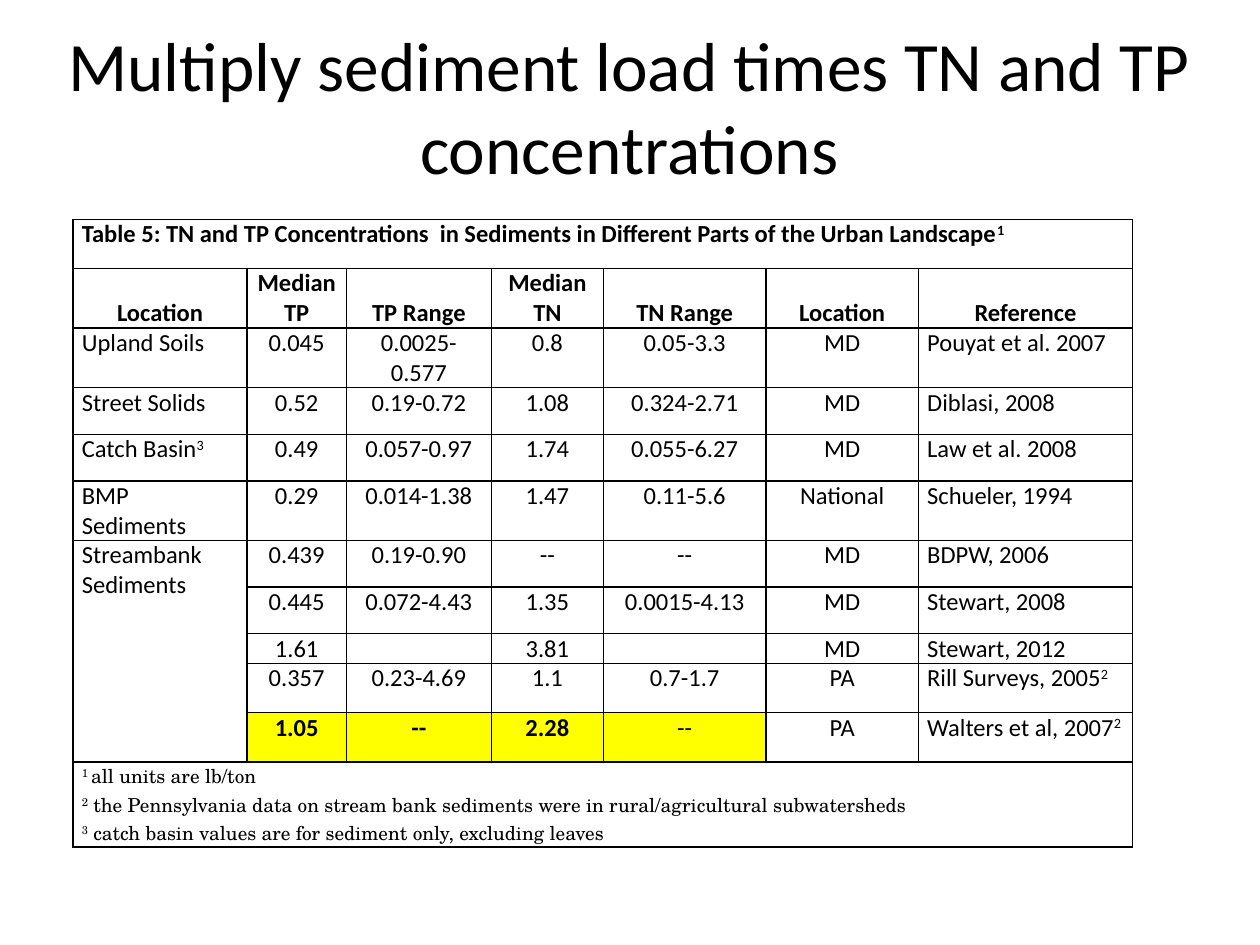
from lxml import etree
from pptx import Presentation, util as u
from pptx.dml.color import RGBColor
from pptx.enum import text
from pptx.oxml.ns import qn

# Content: text between carets is superscript, line breaks separate paragraphs
TITLE = "Multiply sediment load times TN and TP concentrations"
CAPTION = ("Table 5: TN and TP Concentrations  in Sediments in Different Parts "
           "of the Urban Landscape^1")
HEADER = ["Location", "Median TP", "TP Range", "Median TN", "TN Range", "Location", "Reference"]
DATA = [
    ["Upland Soils", "0.045", "0.0025-0.577", "0.8", "0.05-3.3", "MD", "Pouyat et al. 2007"],
    ["Street Solids", "0.52", "0.19-0.72", "1.08", "0.324-2.71", "MD", "Diblasi, 2008"],
    ["Catch Basin^3", "0.49", "0.057-0.97", "1.74", "0.055-6.27", "MD", "Law et al. 2008"],
    ["BMP Sediments", "0.29", "0.014-1.38", "1.47", "0.11-5.6", "National", "Schueler, 1994"],
    ["Streambank\nSediments", "0.439", "0.19-0.90", "--", "--", "MD", "BDPW, 2006"],
    ["", "0.445", "0.072-4.43", "1.35", "0.0015-4.13", "MD", "Stewart, 2008"],
    ["", "1.61", "", "3.81", "", "MD", "Stewart, 2012"],
    ["", "0.357", "0.23-4.69", "1.1", "0.7-1.7", "PA", "Rill Surveys, 2005^2"],
    ["", "1.05", "--", "2.28", "--", "PA", "Walters et al, 2007^2"],
]
NOTES = ("^1 ^all units are lb/ton\n"
         "^2^ the Pennsylvania data on stream bank sediments were in rural/agricultural "
         "subwatersheds\n"
         "^3^ catch basin values are for sediment only, excluding leaves")

COLORS = {"ink": "000000", "highlight": "FFFF00"}
COLUMN_WIDTHS = [1.38, 0.79, 1.15, 0.89, 1.29, 1.21, 1.7]
ROW_HEIGHTS = [0.39, 0.39, 0.39, 0.37, 0.37, 0.39, 0.37, 0.37, 0.19, 0.39, 0.39, 0.55]
LEFT, CENTER = text.PP_ALIGN.LEFT, text.PP_ALIGN.CENTER


def write(frame, content, size=14, font="Calibri", bold=False, align=LEFT):
    for index, line in enumerate(content.split("\n")):
        para = frame.paragraphs[0] if index == 0 else frame.add_paragraph()
        para.alignment = align
        for part, words in enumerate(line.split("^")):
            if not words:
                continue
            span = para.add_run()
            span.text = words
            span.font.size = u.Pt(size)
            span.font.name = font
            span.font.bold = bold
            span.font.color.rgb = RGBColor.from_string(COLORS["ink"])
            if part % 2:
                span.font._element.set("baseline", "30000")
        if not line:  # keeps empty cells from stretching their row
            etree.SubElement(para._p, qn("a:endParaRPr"), sz=str(size * 100))


def style_cell(cell, fill=None, anchor=text.MSO_ANCHOR.TOP):
    cell.margin_left = cell.margin_right = u.Inches(0.07)
    cell.margin_top = cell.margin_bottom = 0
    cell.vertical_anchor = anchor
    properties = cell._tc.get_or_add_tcPr()
    for side in ("a:lnL", "a:lnR", "a:lnT", "a:lnB"):
        line = etree.SubElement(properties, qn(side), w=str(u.Pt(1)))
        solid = etree.SubElement(line, qn("a:solidFill"))
        etree.SubElement(solid, qn("a:srgbClr"), val=COLORS["ink"])
    if fill:
        cell.fill.solid()
        cell.fill.fore_color.rgb = RGBColor.from_string(fill)
    else:
        cell.fill.background()


def add_title(page):
    title = page.shapes.title
    title.left, title.top = u.Inches(0.33), u.Inches(0.42)
    title.width, title.height = u.Inches(9.33), u.Inches(0.83)
    title.text_frame.vertical_anchor = text.MSO_ANCHOR.MIDDLE
    write(title.text_frame, TITLE, size=39.6, align=CENTER)


def add_concentrations(page):
    blank = [""] * (len(HEADER) - 1)
    rows = [[CAPTION] + blank, HEADER] + DATA + [[NOTES] + blank]
    last = len(rows) - 1
    table = page.shapes.add_table(
        len(rows), len(HEADER), u.Inches(0.58), u.Inches(1.74),
        u.Inches(sum(COLUMN_WIDTHS)), u.Inches(sum(ROW_HEIGHTS))).table
    table.first_row = table.horz_banding = False
    for column, width in zip(table.columns, COLUMN_WIDTHS):
        column.width = u.Inches(width)
    for row, height in zip(table.rows, ROW_HEIGHTS):
        row.height = u.Inches(height)

    for r, values in enumerate(rows):
        for c, value in enumerate(values):
            cell = table.cell(r, c)
            header = r == 1
            marked = r == last - 1 and 1 <= c <= 4
            style_cell(cell, COLORS["highlight"] if marked else None,
                       text.MSO_ANCHOR.BOTTOM if header else text.MSO_ANCHOR.TOP)
            if r == last:
                write(cell.text_frame, value, size=11, font="TeX Gyre Schola")
            else:
                write(cell.text_frame, value, bold=r < 2 or (marked and c < 4),
                      align=CENTER if header or 1 <= c <= 5 else LEFT)

    # Caption and notes span the table; streambank rows share one label
    for r in (0, last):
        table.cell(r, 0).merge(table.cell(r, len(HEADER) - 1))
    table.cell(last - 5, 0).merge(table.cell(last - 1, 0))


def main():
    deck = Presentation()
    deck.slide_width, deck.slide_height = u.Inches(10), u.Inches(7.5)
    page = deck.slides.add_slide(deck.slide_layouts[5])
    add_title(page)
    add_concentrations(page)
    deck.save("out.pptx")


if __name__ == "__main__":
    main()
